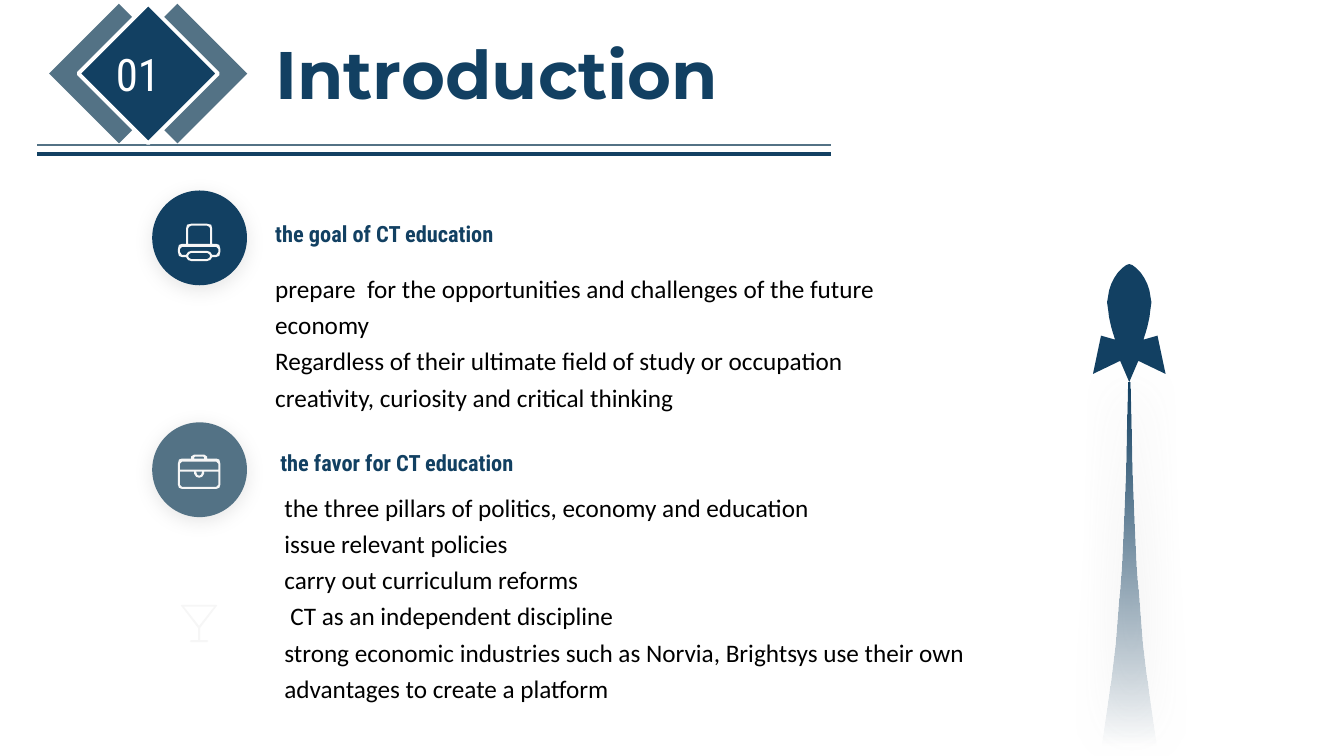
from lxml import etree
from pptx import Presentation
from pptx.dml.color import RGBColor
from pptx.enum.shapes import MSO_CONNECTOR, MSO_SHAPE
from pptx.enum.text import MSO_ANCHOR, MSO_AUTO_SIZE, PP_ALIGN
from pptx.oxml.ns import qn
from pptx.util import Inches, Pt

NAVY = RGBColor(0x12, 0x40, 0x62)
STEEL = RGBColor(0x53, 0x72, 0x85)
WHITE = RGBColor(0xFF, 0xFF, 0xFF)
OFF_WHITE = RGBColor(0xF6, 0xF6, 0xF6)
BLACK = RGBColor(0, 0, 0)

RECTANGLE, OVAL = MSO_SHAPE.RECTANGLE, MSO_SHAPE.OVAL
STRAIGHT = MSO_CONNECTOR.STRAIGHT
LEFT, TOP = PP_ALIGN.LEFT, MSO_ANCHOR.TOP
NO_AUTOFIT = MSO_AUTO_SIZE.NONE

COMPARISON_LAYOUT = 4
ICON_CENTER = 1.975
ROCKET_CENTER = 11.2

# Right halves of symmetric outlines: (offset from center, y), top to bottom
HAT = [
    [(.08, 2.22), (.12, 2.23), (.13, 2.27), (.13, 2.42), (.17, 2.42), (.2, 2.43),
     (.21, 2.47), (.21, 2.5), (.2, 2.54), (.17, 2.55), (.13, 2.55), (.11, 2.58), (.08, 2.59)],
    [(.08, 2.24), (.1, 2.25), (.11, 2.27), (.11, 2.42)],
    [(.08, 2.51), (.1, 2.52), (.11, 2.54), (.1, 2.56), (.08, 2.57)],
    [(.17, 2.45), (.19, 2.47), (.19, 2.5), (.17, 2.53), (.13, 2.53), (.11, 2.5), (.08, 2.49)],
]
BRIEFCASE = [
    [(.05, 4.51), (.08, 4.53), (.08, 4.55), (.17, 4.55), (.2, 4.56), (.21, 4.6),
     (.21, 4.81), (.2, 4.84), (.17, 4.85)],
    [(.04, 4.53), (.05, 4.54), (.05, 4.55)],
    [(.17, 4.58), (.19, 4.6), (.19, 4.66)],
    [(0, 4.74), (.03, 4.73), (.05, 4.7), (.05, 4.68), (.19, 4.68), (.19, 4.81), (.17, 4.83)],
    [(.03, 4.68), (.02, 4.71), (0, 4.72)],
]
GLASS = [
    [(.17, 6), (.18, 6.01), (.17, 6.02), (.01, 6.23), (.01, 6.35), (.08, 6.35),
     (.09, 6.36), (.08, 6.37)],
    [(.15, 6.02), (0, 6.21)],
]
ROCKET = [
    [(0, 2.62), (.03, 2.63), (.07, 2.66), (.11, 2.7), (.15, 2.76), (.18, 2.82), (.2, 2.88),
     (.21, 2.94), (.22, 3), (.21, 3.07), (.2, 3.15), (.18, 3.24), (.16, 3.31), (.14, 3.37),
     (.28, 3.33), (.36, 3.71), (.09, 3.58), (0, 3.79)],
]
FLAME = [
    [(.01, 3.79), (.02, 4.17), (.03, 4.67), (.05, 5.16), (.07, 5.6), (.1, 6),
     (.13, 6.38), (.19, 6.87), (.25, 7.28), (.27, 7.41)],
]

GOALS = [
    "prepare  for the opportunities and challenges of the future economy",
    "Regardless of their ultimate field of study or occupation creativity, "
    "curiosity and critical thinking",
]
FAVORS = [
    "the three pillars of politics, economy and education",
    "issue relevant policies",
    "carry out curriculum reforms",
    "CT as an independent discipline",
    "strong economic industries such as Norvia, Brightsys use their own "
    "advantages to create a platform",
]


def paint(shape, fill, outline=None, width=0):
    shape.shadow.inherit = False
    shape.fill.solid()
    shape.fill.fore_color.rgb = fill
    if outline is None:
        shape.line.fill.background()
    else:
        shape.line.color.rgb = outline
        shape.line.width = Pt(width)


def add_shadow(shape, color, alpha, blur, distance, angle, **scaling):
    effects = shape._element.spPr.find(qn("a:effectLst"))
    shadow = etree.SubElement(
        effects, qn("a:outerShdw"), blurRad=str(Pt(blur)), dist=str(Pt(distance)),
        dir=str(angle * 60000), **scaling, rotWithShape="0")
    tint = etree.SubElement(shadow, qn("a:srgbClr"), val=str(color))
    etree.SubElement(tint, qn("a:alpha"), val=str(alpha * 1000))


def add_rule(slide, y, color, width):
    rule = slide.shapes.add_connector(STRAIGHT, Inches(8.24), Inches(y), Inches(0.37), Inches(y))
    rule.line.color.rgb = color
    rule.line.width = Pt(width)
    etree.SubElement(rule._element.spPr, qn("a:effectLst"))


def add_badge_square(slide, left, fill, outline=None, width=0):
    square = slide.shapes.add_shape(
        RECTANGLE, Inches(left), Inches(0.24), Inches(0.98), Inches(0.98))
    square.rotation = 45
    paint(square, fill, outline, width)


def add_disc(slide, top, fill):
    disc = slide.shapes.add_shape(OVAL, Inches(1.51), Inches(top), Inches(0.94), Inches(0.94))
    paint(disc, fill)
    add_shadow(disc, BLACK, 10, 14, 3, 90, sy="-23000", algn="b")


def add_symmetric(slide, center, halves, fill):
    """Draw closed outlines, each mirrored about a vertical axis."""
    builder = None
    for half in halves:
        right = [(Inches(center + dx), Inches(y)) for dx, y in half]
        left = [(Inches(center - dx), Inches(y)) for dx, y in reversed(half)]
        start, *rest = right + left
        if builder is None:
            builder = slide.shapes.build_freeform(*start)
        else:
            builder.move_to(*start)
        builder.add_line_segments(rest, close=True)
    outline = builder.convert_to_shape()
    paint(outline, fill)
    return outline


def write(box, place, lines, font, size, color, bold=False, wrap=False, spacing=1.0):
    box.left, box.top, box.width, box.height = (Inches(value) for value in place)
    frame = box.text_frame
    frame.text = "\n".join(lines)
    frame.auto_size = NO_AUTOFIT
    frame.word_wrap = wrap
    frame.vertical_anchor = TOP
    for paragraph in frame.paragraphs:
        properties = paragraph._p.get_or_add_pPr()
        properties.set("marL", "0")
        properties.set("indent", "0")
        etree.SubElement(properties, qn("a:buNone"))
        paragraph.alignment = LEFT
        paragraph.line_spacing = spacing
        paragraph.space_before = Pt(0)
        paragraph.font.name = font
        paragraph.font.size = Pt(size)
        paragraph.font.bold = bold
        paragraph.font.color.rgb = color


def add_flame(slide):
    flame = add_symmetric(slide, ROCKET_CENTER, FLAME, NAVY)
    flame.fill.gradient()
    flame.fill.gradient_angle = 90
    for stop in flame.fill.gradient_stops:
        stop.color.rgb = NAVY
    tail_color = flame._element.spPr.find(".//" + qn("a:srgbClr"))
    etree.SubElement(tail_color, qn("a:alpha"), val="0")
    add_shadow(flame, RGBColor(0x80, 0x80, 0x80), 40, 33, 2, 45)


def main():
    deck = Presentation()
    deck.slide_width, deck.slide_height = Inches(13.33), Inches(7.5)
    slide = deck.slides.add_slide(deck.slide_layouts[COMPARISON_LAYOUT])
    for footer in [p for p in slide.placeholders if p.placeholder_format.idx >= 10]:
        footer._element.getparent().remove(footer._element)
    title, goal_head, goal_list, favor_head, favor_list = slide.placeholders

    # Header: numbered badge, title and double rule
    add_rule(slide, 1.44, STEEL, 1)
    add_badge_square(slide, 1.27, STEEL)
    add_badge_square(slide, 0.69, STEEL)
    add_badge_square(slide, 0.98, NAVY, WHITE, 2.75)
    number = slide.shapes.add_textbox(0, 0, 0, 0)
    write(number, (1.05, 0.41, 0.67, 0.64), ["01"], "Roboto Condensed", 32, WHITE)
    add_rule(slide, 1.53, NAVY, 3)
    write(title, (2.63, 0.27, 4.73, 0.91), ["Introduction"], "Montserrat", 48, NAVY, bold=True)

    # Section headings and lists
    for head, place, text in (
        (goal_head, (2.63, 2.13, 2.79, 0.37), "the goal of CT education"),
        (favor_head, (2.68, 4.41, 2.98, 0.37), "the favor for CT education"),
    ):
        write(head, place, [text], "Roboto Condensed", 16, NAVY, bold=True)
    for body, place, lines in (
        (goal_list, (2.63, 2.6, 6.55, 1.56), GOALS),
        (favor_list, (2.72, 4.77, 7.54, 2.89), FAVORS),
    ):
        write(body, place, lines, "Calibri", 18, BLACK, wrap=True, spacing=1.2)
    independent = favor_list.text_frame.paragraphs[3]
    independent._p.get_or_add_pPr().set("marL", str(Inches(0.06)))

    # Section icons
    add_disc(slide, 1.89, NAVY)
    add_disc(slide, 4.19, STEEL)
    for icon in (GLASS, BRIEFCASE, HAT):
        add_symmetric(slide, ICON_CENTER, icon, OFF_WHITE)

    # Rocket
    add_symmetric(slide, ROCKET_CENTER, ROCKET, NAVY)
    add_flame(slide)

    deck.save("out.pptx")


if __name__ == "__main__":
    main()
